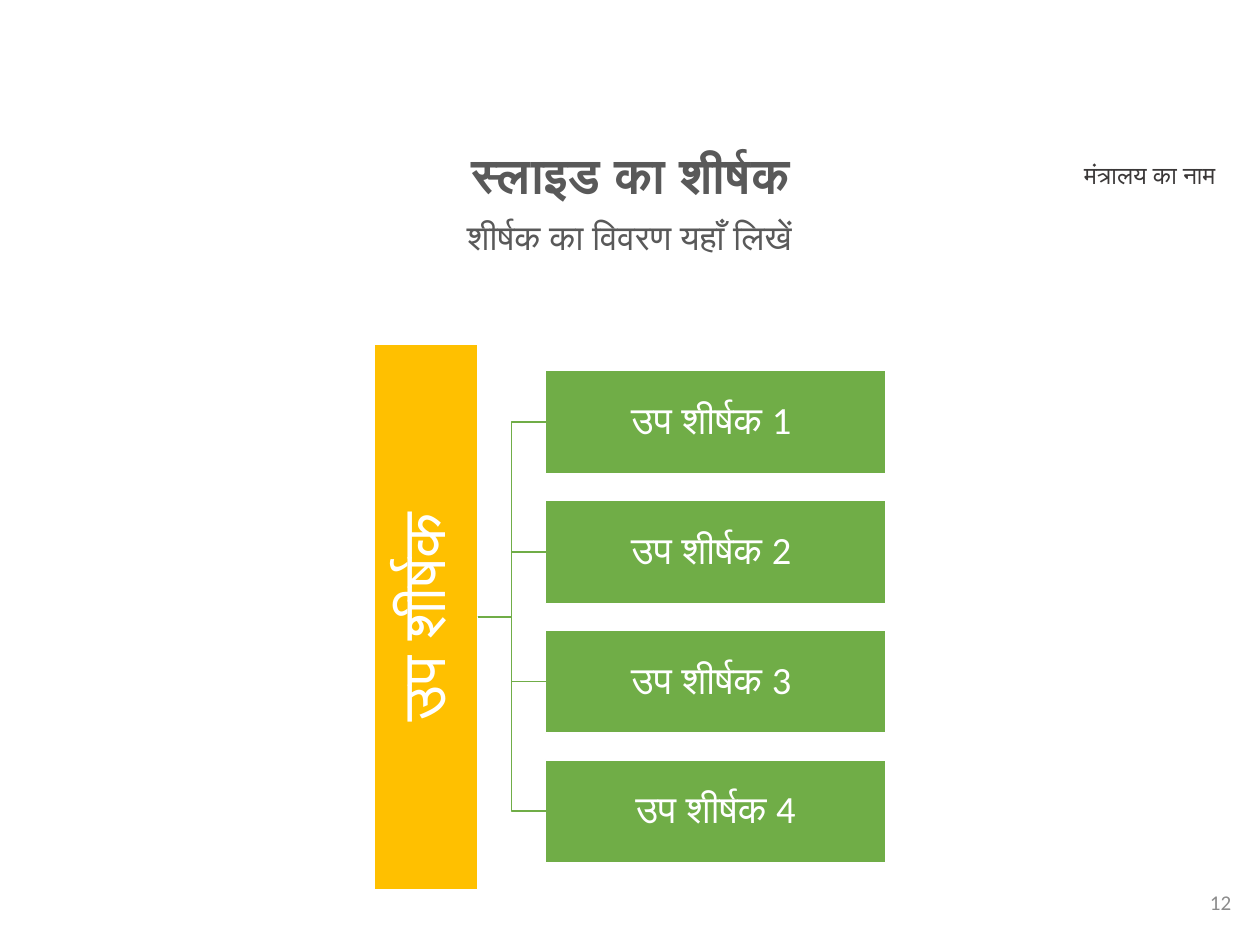
from lxml import etree
from pptx import Presentation
from pptx import util as u
from pptx.dml.color import RGBColor
from pptx.enum import shapes, text
from pptx.oxml.ns import qn

PX = 9144  # 100 px to the inch
FONT = "Calibri"
WHITE = RGBColor(0xFF, 0xFF, 0xFF)
GREEN = RGBColor(0x70, 0xAD, 0x47)
AMBER = RGBColor(0xFF, 0xC0, 0x00)
GREY = RGBColor(0x59, 0x59, 0x59)
DARK = RGBColor(0x3B, 0x38, 0x38)
PALE = RGBColor(0x8C, 0x8C, 0x8C)
ALIGN = text.PP_ALIGN
ANCHOR = text.MSO_ANCHOR


def place(sp, box):
    sp.left, sp.top, sp.width, sp.height = (u.Emu(v * PX) for v in box)


def write(sp, words, size, color, align=ALIGN.CENTER, anchor=ANCHOR.TOP,
          bold=False, spacing=1.0):
    tf = sp.text_frame
    tf.text = words
    tf.word_wrap = True
    tf.auto_size = text.MSO_AUTO_SIZE.NONE
    tf.vertical_anchor = anchor
    p = tf.paragraphs[0]
    p.alignment = align
    p.line_spacing = spacing
    p.space_before = u.Pt(0)
    font = p.runs[0].font
    font.name, font.size, font.bold = FONT, u.Pt(size), bold
    font.color.rgb = color


def add_heading(slide, box):
    x, y, w, h = box
    title, subtitle = slide.placeholders
    place(title, (x + 40, y, w - 78, 47))
    write(title, "स्लाइड का शीर्षक", 28, GREY, bold=True, spacing=0.9)
    place(subtitle, (x, y + 55, w, h - 55))
    write(subtitle, "शीर्षक का विवरण यहाँ लिखें", 20, GREY, spacing=0.9)


def add_label(slide, box, words, size, color, **layout):
    sp = slide.shapes.add_textbox(0, 0, 0, 0)
    place(sp, box)
    write(sp, words, size, color, **layout)


def add_block(slide, box, words, size, fill):
    sp = slide.shapes.add_shape(shapes.MSO_SHAPE.RECTANGLE, 0, 0, 0, 0)
    place(sp, box)
    sp.shadow.inherit = False
    sp.fill.solid()
    sp.fill.fore_color.rgb = fill
    sp.line.color.rgb = WHITE
    sp.line.width = u.Pt(1)
    write(sp, words, size, WHITE, anchor=ANCHOR.MIDDLE, spacing=0.9)
    tf = sp.text_frame
    tf.margin_left = tf.margin_right = u.Emu(2 * PX)
    tf.margin_top = tf.margin_bottom = u.Emu(2 * PX)
    return sp


def add_branch(slide, parent, child):
    """Join the parent's right side to the child's left side with an elbow."""
    cx = slide.shapes.add_connector(shapes.MSO_CONNECTOR.ELBOW, 0, 0, 0, 0)
    cx.begin_connect(parent, 3)
    cx.end_connect(child, 1)
    cx.line.color.rgb = GREEN
    cx.line.width = u.Pt(1)
    etree.SubElement(cx._element.spPr, qn("a:effectLst"))


def add_hierarchy(slide, box, root_words, child_words):
    x, y, w, h = box
    bar, gap, step = 82, 54, 103
    root = add_block(slide, (x, y, bar, h), root_words, 35, AMBER)
    root.text_frame._txBody.bodyPr.set("vert", "vert270")
    child_x = x + bar + gap
    first_y = y + (h - bar - step * (len(child_words) - 1)) // 2
    for i, words in enumerate(child_words):
        child = add_block(slide, (child_x, first_y + i * step, x + w - child_x, bar),
                          words, 22, GREEN)
        add_branch(slide, root, child)


def main():
    prs = Presentation()
    prs.slide_width, prs.slide_height = u.Emu(1000 * PX), u.Emu(750 * PX)
    slide = prs.slides.add_slide(prs.slide_layouts[0])
    add_label(slide, (831, 122, 163, 34), "मंत्रालय का नाम", 14, DARK)
    add_label(slide, (762, 696, 225, 40), "12", 12, PALE,
              align=ALIGN.RIGHT, anchor=ANCHOR.MIDDLE)
    add_heading(slide, (146, 115, 707, 118))
    add_hierarchy(slide, (297, 273, 406, 433), "उप शीर्षक",
                  ["उप शीर्षक 1 ", "उप शीर्षक 2 ", "उप शीर्षक 3 ", "उप शीर्षक 4"])
    prs.save("out.pptx")


if __name__ == "__main__":
    main()
